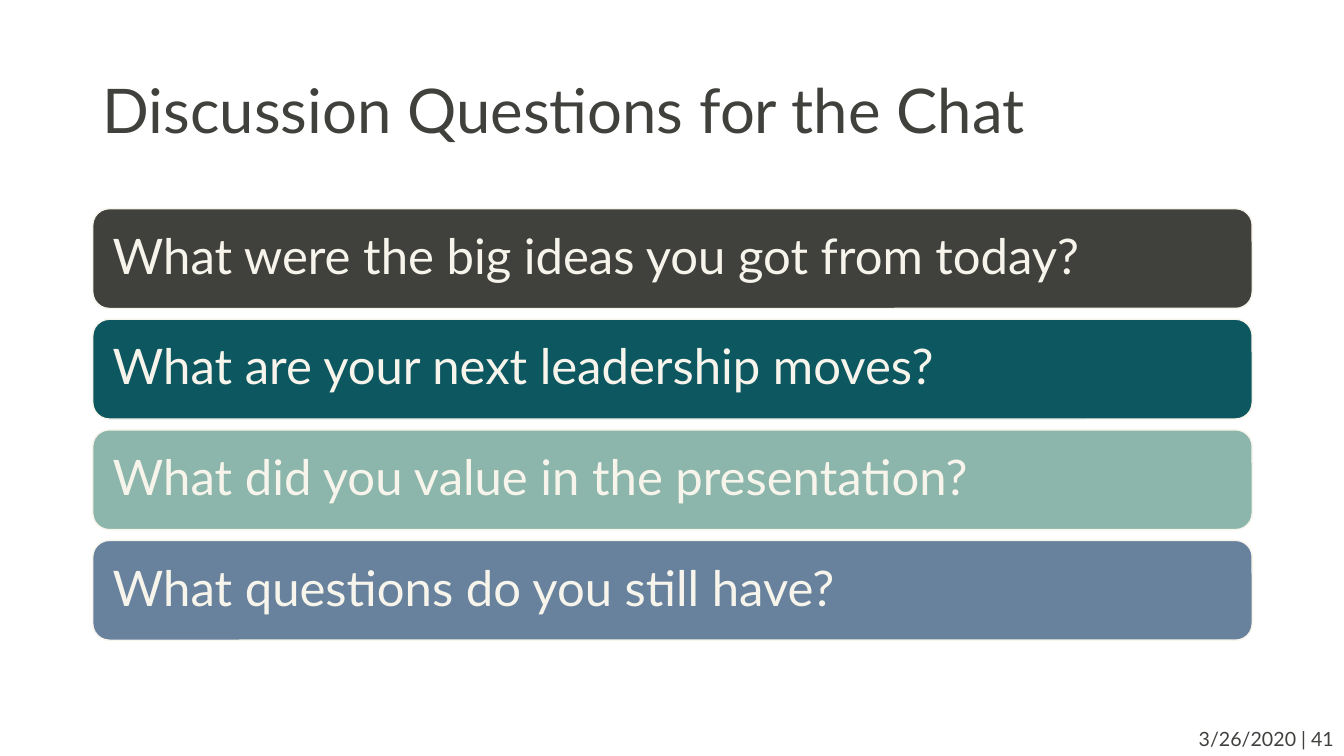
from pptx import Presentation
from pptx.dml.color import RGBColor
from pptx.enum.shapes import MSO_SHAPE
from pptx.enum.text import MSO_ANCHOR, PP_ALIGN
from pptx.util import Inches, Pt

COLORS = {
    "charcoal": "40403D",
    "teal": "0D5761",
    "sage": "8CB5AB",
    "slate": "68829E",
    "cream": "F7F5EB",
}
QUESTIONS = [
    ("What were the big ideas you got from today?", "charcoal"),
    ("What are your next leadership moves?", "teal"),
    ("What did you value in the presentation?", "sage"),
    ("What questions do you still have?", "slate"),
]


def write_text(shape, text, size, color="charcoal", align=PP_ALIGN.LEFT,
               anchor=MSO_ANCHOR.MIDDLE, line_spacing=0.9, side_margin=0.1):
    frame = shape.text_frame
    frame.word_wrap = True
    frame.vertical_anchor = anchor
    frame.margin_left = frame.margin_right = Inches(side_margin)
    paragraph = frame.paragraphs[0]
    paragraph.alignment = align
    paragraph.line_spacing = line_spacing
    run = paragraph.add_run()
    run.text = text
    run.font.name = "Lato"
    run.font.size = Pt(size)
    run.font.color.rgb = RGBColor.from_string(COLORS[color])


presentation = Presentation()
presentation.slide_width = Inches(13.33)
presentation.slide_height = Inches(7.5)
slide = presentation.slides.add_slide(presentation.slide_layouts[6])

# Title
title = slide.shapes.add_textbox(Inches(0.92), Inches(0.4), Inches(11.5), Inches(1.45))
write_text(title, "Discussion Questions for the Chat", 44)

# Question bars, stacked at an equal pitch
first_top, pitch = 2.07, 1.097
for index, (question, fill) in enumerate(QUESTIONS):
    bar = slide.shapes.add_shape(
        MSO_SHAPE.ROUNDED_RECTANGLE,
        Inches(0.92), Inches(first_top + index * pitch), Inches(11.5), Inches(0.99))
    bar.shadow.inherit = False
    bar.fill.solid()
    bar.fill.fore_color.rgb = RGBColor.from_string(COLORS[fill])
    bar.line.color.rgb = RGBColor.from_string(COLORS["cream"])
    bar.line.width = Pt(1)
    write_text(bar, question, 35, color="cream", side_margin=0.15)

# Date and slide number
footer = slide.shapes.add_textbox(Inches(11.62), Inches(7.16), Inches(1.71), Inches(0.34))
write_text(footer, "3/26/2020 | 41", 14, align=PP_ALIGN.RIGHT,
           anchor=MSO_ANCHOR.TOP, line_spacing=1.0)

presentation.save("out.pptx")
